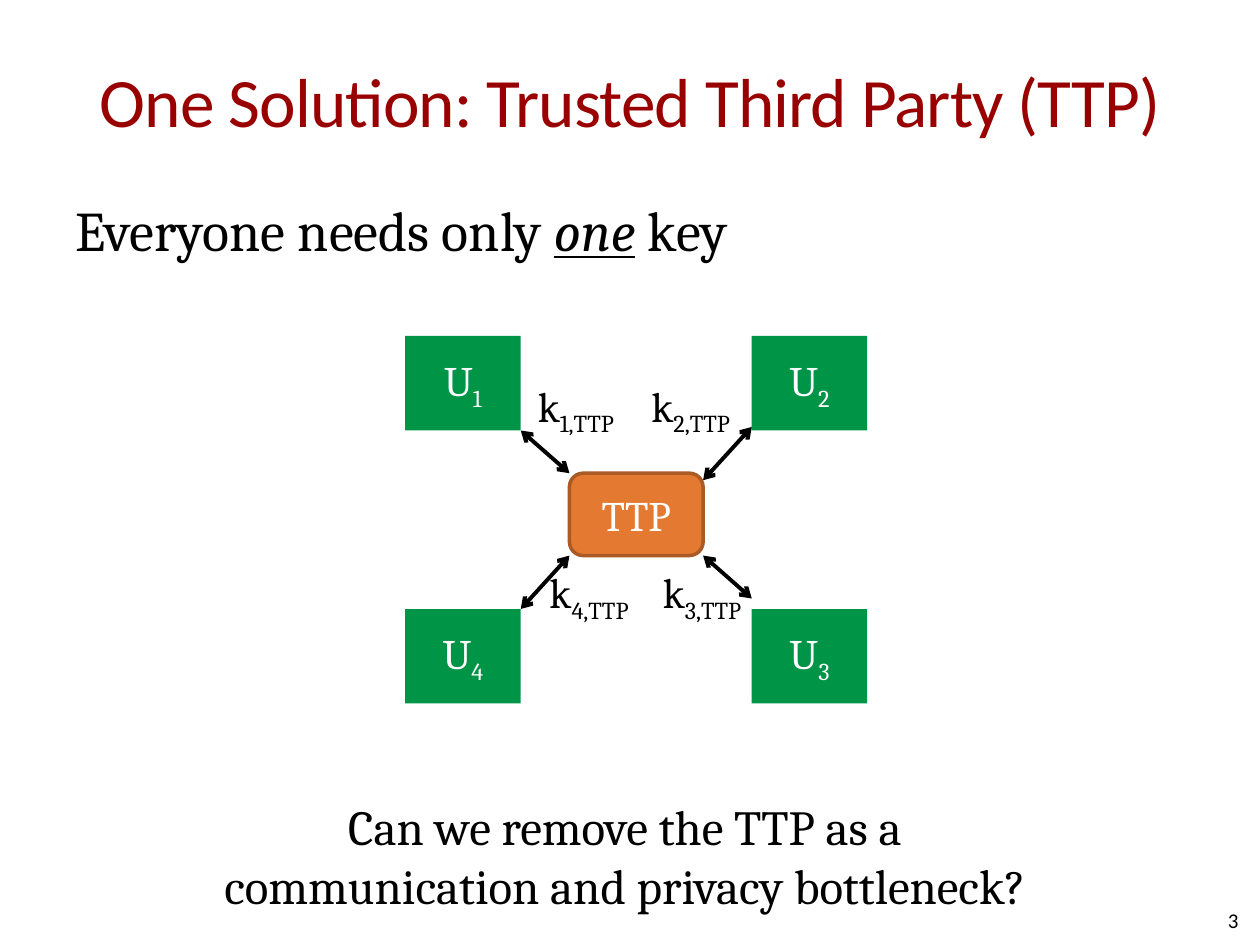
import pptx
import pptx.util
import pptx.dml.color
import pptx.enum.shapes
import pptx.enum.text
import pptx.oxml.ns
import lxml.etree

Pt = pptx.util.Pt
Shape = pptx.enum.shapes.MSO_SHAPE
Align = pptx.enum.text.PP_ALIGN
Anchor = pptx.enum.text.MSO_ANCHOR
Fit = pptx.enum.text.MSO_AUTO_SIZE

SERIF = "Cambria"
SANS = "Calibri"
BLACK = "000000"
WHITE = "FFFFFF"
RED = "990000"
GREEN = "009446"
ORANGE = "E47932"
BROWN = "A95A25"


def color(code):
    return pptx.dml.color.RGBColor.from_string(code)


def child(node, tag, **attrs):
    return lxml.etree.SubElement(node, pptx.oxml.ns.qn(tag), **attrs)


def add_run(para, text, size, face=SERIF, code=BLACK, **attrs):
    run = para.add_run()
    run.text = text
    run.font.size = Pt(size)
    run.font.name = face
    run.font.color.rgb = color(code)
    for key, value in attrs.items():
        run._r.get_or_add_rPr().set(key, value)
    return run


def add_pair(para, base, sub, code):
    add_run(para, base, 24, code=code)
    add_run(para, sub, 24, code=code, baseline="-25000")


def place(shape, left, top, width, height):
    shape.left, shape.top = Pt(left), Pt(top)
    shape.width, shape.height = Pt(width), Pt(height)


def set_frame(shape, align, anchor, side=0, edge=0):
    frame = shape.text_frame
    frame.word_wrap = True
    frame.auto_size = Fit.NONE
    frame.vertical_anchor = anchor
    frame.margin_left = frame.margin_right = Pt(side)
    frame.margin_top = frame.margin_bottom = Pt(edge)
    para = frame.paragraphs[0]
    para.alignment = align
    return para


def add_title(slide, text):
    title = slide.shapes.title
    place(title, 36, 12.24, 648, 90)
    para = set_frame(title, Align.CENTER, Anchor.MIDDLE, 0, 3.6)
    add_run(para, text, 39.6, SANS, RED, spc="-50")


def add_body(slide, parts):
    body = slide.placeholders[1]
    place(body, 36, 108, 648, 374.4)
    para = set_frame(body, Align.LEFT, Anchor.TOP, 7.2, 3.6)
    props = para._p.get_or_add_pPr()
    props.set("marL", "0")
    props.set("indent", "0")
    child(props, "a:buNone")
    for text, stress in parts:
        run = add_run(para, text, 32)
        run.font.italic = stress
        run.font.underline = stress


def add_box(slide, kind, area, fill=None, line=None):
    box = slide.shapes.add_shape(kind, *map(Pt, area))
    box.shadow.inherit = False
    if fill:
        box.fill.solid()
        box.fill.fore_color.rgb = color(fill)
    else:
        box.fill.background()
    if line:
        box.line.color.rgb = color(line)
        box.line.width = Pt(2)
    else:
        box.line.fill.background()
    return set_frame(box, Align.CENTER, Anchor.MIDDLE)


def add_arrow(slide, start, end):
    kind = pptx.enum.shapes.MSO_CONNECTOR.STRAIGHT
    arrow = slide.shapes.add_connector(kind, *map(Pt, start + end))
    arrow.line.color.rgb = color(BLACK)
    arrow.line.width = Pt(2.25)
    line = arrow.line._get_or_add_ln()
    for tag in ("a:headEnd", "a:tailEnd"):
        child(line, tag, type="arrow")
    child(arrow._element.spPr, "a:effectLst")


def add_label(slide, left, top, sub):
    label = slide.shapes.add_textbox(Pt(left), Pt(top), Pt(53.3), Pt(28.8))
    para = set_frame(label, Align.LEFT, Anchor.TOP)
    label.text_frame.word_wrap = False
    label.text_frame.auto_size = Fit.SHAPE_TO_FIT_TEXT
    add_pair(para, "k", sub, BLACK)


def add_page(slide, text):
    page = slide.shapes.add_textbox(Pt(540), Pt(511.2), Pt(167.76), Pt(28.8))
    add_run(set_frame(page, Align.RIGHT, Anchor.MIDDLE), text, 12, SANS)


def main():
    deck = pptx.Presentation()
    deck.slide_width, deck.slide_height = Pt(720), Pt(540)
    slide = deck.slides.add_slide(deck.slide_layouts[1])
    add_title(slide, "One Solution: Trusted Third Party (TTP)")
    add_body(slide, [("Everyone needs only ", False), ("one", True), (" key", False)])
    add_page(slide, "3")

    west, east, north, south = 231.6, 429.6, 192, 348
    users = [
        ("1", west, north, (297.6, 246), (325.4, 270.4), (307.4, 217.4)),
        ("2", east, north, (429.6, 244), (401.8, 274.4), (372.2, 217.4)),
        ("3", east, south, (429.6, 342), (401.8, 317.5), (378.8, 324)),
        ("4", west, south, (297.6, 348), (325.4, 317.5), (314, 324)),
    ]
    for name, left, top, start, end, spot in users:
        para = add_box(slide, Shape.RECTANGLE, (left, top, 66, 54), GREEN)
        add_pair(para, "U", name, WHITE)
        add_arrow(slide, start, end)
        add_label(slide, *spot, name + ",TTP")

    hub = add_box(slide, Shape.ROUNDED_RECTANGLE, (325.4, 270.4, 76.4, 47.1), ORANGE, BROWN)
    add_run(hub, "TTP", 24, code=WHITE)
    ask = add_box(slide, Shape.SNIP_1_RECTANGLE, (114, 450, 492, 72))
    add_run(ask, "Can we remove the TTP as a communication and privacy bottleneck?", 28)
    deck.save("out.pptx")


if __name__ == "__main__":
    main()
